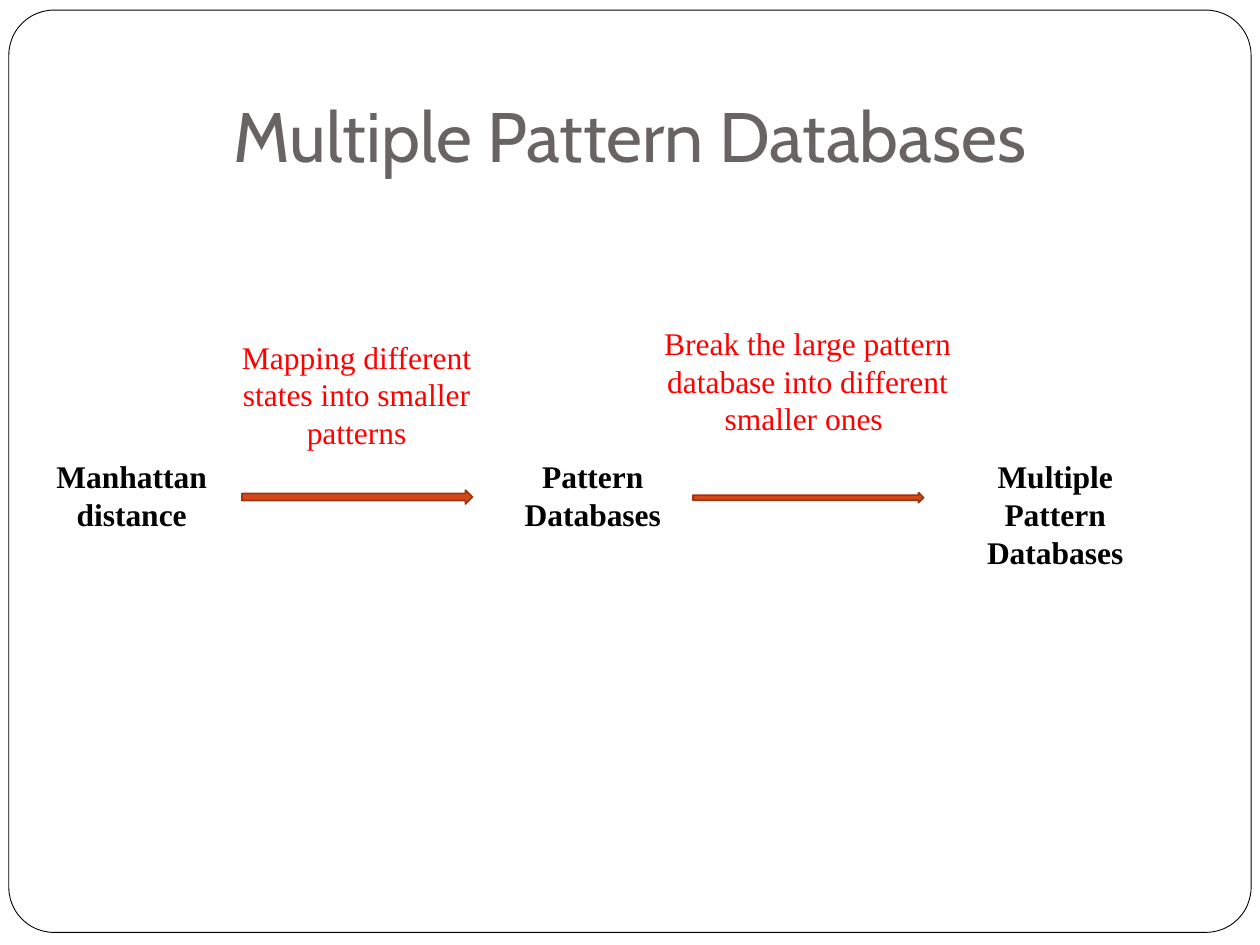
from pptx import Presentation
from pptx.dml.color import RGBColor
from pptx.enum.shapes import MSO_SHAPE as Kind
from pptx.enum.text import MSO_ANCHOR as Anchor, MSO_AUTO_SIZE as Fit, PP_ALIGN as Align
from pptx.util import Inches, Pt

SERIF = "Times New Roman"
BLACK, RED = "000000", "FF0000"


def color(code):
    return RGBColor.from_string(code)


def style(para, name, size, code, bold=False):
    para.alignment = Align.CENTER
    font = para.font
    font.name, font.size, font.bold = name, Pt(size), bold
    font.color.rgb = color(code)


def add_shape(slide, kind, box, fill, line, width):
    shape = slide.shapes.add_shape(kind, *map(Inches, box))
    shape.shadow.inherit = False
    shape.fill.solid()
    shape.fill.fore_color.rgb = color(fill)
    shape.line.color.rgb = color(line)
    shape.line.width = Pt(width)
    return shape


def add_frame(slide):
    """Draw the rounded page border behind everything else."""
    frame = add_shape(slide, Kind.ROUNDED_RECTANGLE, (0.07, 0.08, 9.86, 7.32),
                      "FFFFFF", BLACK, 0.5)
    frame.adjustments[0] = 0.049
    slide.shapes._spTree.insert(2, frame._element)


def set_title(slide, text):
    title = slide.shapes.title
    title.left, title.top = Inches(0.5), Inches(0.42)
    title.width, title.height = Inches(9), Inches(1.08)
    body = title.text_frame
    body.text = text
    body.auto_size = Fit.NONE
    body.vertical_anchor = Anchor.BOTTOM
    body.margin_bottom = Inches(0.1)
    style(body.paragraphs[0], "Cabin", 40, "696464")


def add_text(slide, text, box, code, bold=False):
    body = slide.shapes.add_textbox(*map(Inches, box)).text_frame
    body.word_wrap = True
    body.auto_size = Fit.SHAPE_TO_FIT_TEXT
    body.text = text
    style(body.paragraphs[0], SERIF, 18, code, bold)


def add_stage(slide, text, left, height):
    add_text(slide, text, (left, 3.58, 1.75, height), BLACK, True)


def add_step(slide, text, left, top, height):
    add_text(slide, text, (left, top, 2.58, height), RED)


def add_arrow(slide, left, top, height):
    add_shape(slide, Kind.RIGHT_ARROW, (left, top, 1.83, height),
              "D34817", "9C3511", 1)


def main():
    deck = Presentation()
    deck.slide_width, deck.slide_height = Inches(10), Inches(7.5)
    slide = deck.slides.add_slide(deck.slide_layouts[5])
    add_frame(slide)
    set_title(slide, "Multiple Pattern Databases")

    add_stage(slide, "Manhattan distance", 0.17, 0.71)
    add_stage(slide, "Pattern Databases", 3.83, 0.71)
    add_stage(slide, "Multiple Pattern Databases", 7.5, 1.01)

    add_arrow(slide, 1.92, 3.89, 0.11)
    add_arrow(slide, 5.5, 3.91, 0.08)

    add_step(slide, "Mapping different states into smaller patterns",
             1.54, 2.63, 1.01)
    add_step(slide, "Break the large pattern database into different smaller ones ",
             5.12, 2.52, 1.31)

    deck.save("out.pptx")


if __name__ == "__main__":
    main()
